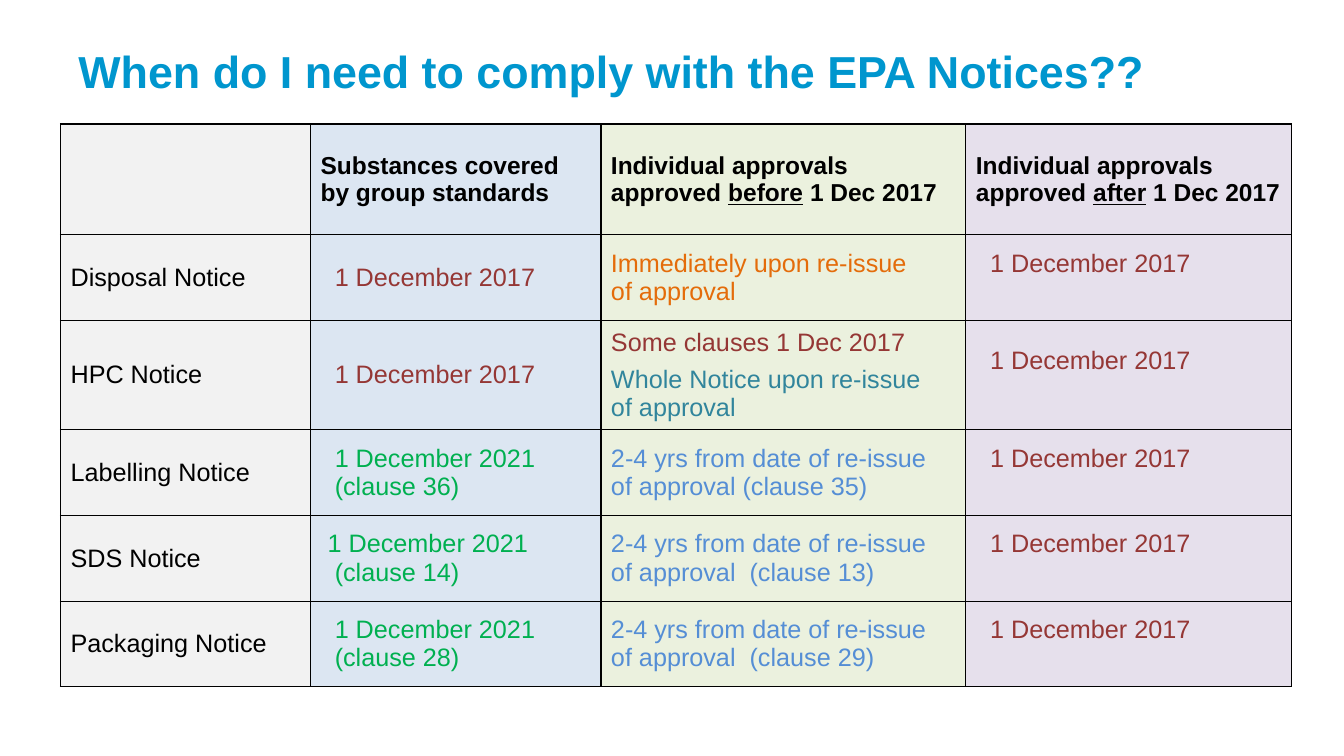
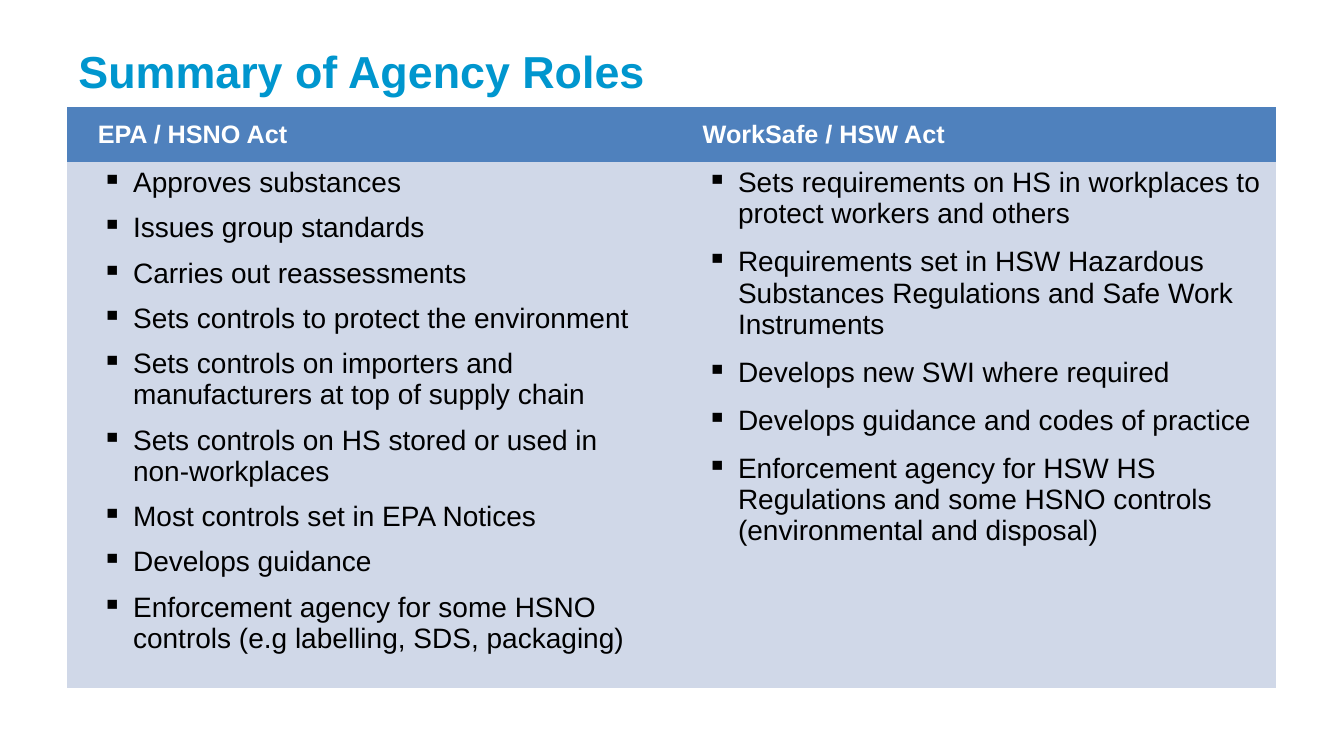
"""Build two slides on notice compliance dates and agency roles."""
from lxml import etree
from pptx import Presentation
from pptx.dml.color import RGBColor
from pptx.enum.text import MSO_ANCHOR
from pptx.oxml.ns import qn
from pptx.util import Inches, Pt

MIDDLE, TOP = MSO_ANCHOR.MIDDLE, MSO_ANCHOR.TOP
FONT = "Arial"
NO_GRID_STYLE = "{2D5ABB26-0587-4C30-8999-92F81FD0307C}"

BLACK = RGBColor(0x00, 0x00, 0x00)
WHITE = RGBColor(0xFF, 0xFF, 0xFF)
TITLE_BLUE = RGBColor(0x00, 0x96, 0xCE)
MAROON = RGBColor(0x95, 0x37, 0x35)
ORANGE = RGBColor(0xE4, 0x6C, 0x0A)
TEAL = RGBColor(0x31, 0x85, 0x9C)
GREEN = RGBColor(0x00, 0xB0, 0x50)
SKY = RGBColor(0x55, 0x8E, 0xD5)
HEADER_BLUE = RGBColor(0x4F, 0x81, 0xBD)
BODY_BLUE = RGBColor(0xD0, 0xD8, 0xE8)
COLUMN_FILLS = [
    RGBColor(0xF2, 0xF2, 0xF2),
    RGBColor(0xDC, 0xE6, 0xF2),
    RGBColor(0xEB, 0xF1, 0xDE),
    RGBColor(0xE6, 0xE0, 0xEC),
]

NOTICES_TITLE = "When do I need to comply with the EPA Notices??"
NOTICE_HEADERS = [
    "",
    "Substances covered\nby group standards",
    "Individual approvals\napproved _before_ 1 Dec 2017",
    "Individual approvals\napproved _after_ 1 Dec 2017",
]
START_DATE = "1 December 2017"
NOTICES = [
    ("Disposal Notice", (START_DATE, MAROON),
     [("Immediately upon re-issue\nof approval", ORANGE)]),
    ("HPC Notice", (START_DATE, MAROON),
     [("Some clauses 1 Dec 2017", MAROON),
      ("Whole Notice upon re-issue\nof approval", TEAL)]),
    ("Labelling Notice", ("1 December 2021\n(clause 36)", GREEN),
     [("2-4 yrs from date of re-issue\nof approval (clause 35)", SKY)]),
    ("SDS Notice", ("1 December 2021\n(clause 14)", GREEN),
     [("2-4 yrs from date of re-issue\nof approval  (clause 13)", SKY)]),
    ("Packaging Notice", ("1 December 2021\n(clause 28)", GREEN),
     [("2-4 yrs from date of re-issue\nof approval  (clause 29)", SKY)]),
]
OUTDENTED_NOTICE = "SDS Notice"
NOTICE_COLUMNS = [2.48, 2.88, 3.62, 3.23]
NOTICE_ROWS = [1.1, 0.85, 1.02, 0.85, 0.85, 0.85]
DATE_INDENT = 0.14

ROLES_TITLE = "Summary of Agency Roles"
ROLES = [
    ("EPA / HSNO Act", 10, [
        "Approves substances",
        "Issues group standards",
        "Carries out reassessments",
        "Sets controls to protect the environment",
        "Sets controls on importers and manufacturers at top of supply chain",
        "Sets controls on HS stored or used in\nnon-workplaces",
        "Most controls set in EPA Notices",
        "Develops guidance",
        "Enforcement agency for some HSNO controls (e.g labelling, SDS, packaging)",
    ]),
    ("WorkSafe / HSW Act", 12, [
        "Sets requirements on HS in workplaces to protect workers and others",
        "Requirements set in HSW Hazardous Substances Regulations and Safe Work Instruments",
        "Develops new SWI where required",
        "Develops guidance and codes of practice",
        "Enforcement agency for HSW HS Regulations and some HSNO controls\n"
        "(environmental and disposal)",
    ]),
]
ROLE_COLUMNS = [6, 6]
ROLE_ROWS = [0.55, 5.21]


def write(frame, text, size=18, color=BLACK, bold=False, first=True,
          before=0, left=0, indent=0, bullet=None):
    """Write one paragraph; underscores enclose underlined words."""
    paragraph = frame.paragraphs[0] if first else frame.add_paragraph()
    properties = paragraph._p.get_or_add_pPr()
    properties.set("marL", str(Inches(left)))
    properties.set("indent", str(Inches(indent)))
    if bullet:
        etree.SubElement(properties, qn("a:buChar")).set("char", bullet)
    if before and not first:
        paragraph.space_before = Pt(before)
    for line_index, line in enumerate(text.split("\n")):
        if line_index:
            paragraph.add_line_break()
        for part_index, part in enumerate(line.split("_")):
            run = paragraph.add_run()
            run.text = part
            font = run.font
            font.name, font.size, font.bold = FONT, Pt(size), bold
            font.color.rgb = color
            if part_index % 2:
                font.underline = True


def add_titled_slide(presentation, title):
    """Add a blank slide with the shared title style."""
    slide = presentation.slides.add_slide(presentation.slide_layouts[6])
    box = slide.shapes.add_textbox(Inches(0.68), Inches(0.36), Inches(12), Inches(0.69))
    box.text_frame.word_wrap = True
    box.text_frame.vertical_anchor = MIDDLE
    write(box.text_frame, title, size=32, color=TITLE_BLUE, bold=True)
    return slide


def add_plain_table(slide, left, top, columns, rows):
    """Add a table without a preset style."""
    frame = slide.shapes.add_table(
        len(rows), len(columns), Inches(left), Inches(top),
        Inches(sum(columns)), Inches(sum(rows)))
    table = frame.table
    table.horz_banding = False
    table._tbl.tblPr.find(qn("a:tableStyleId")).text = NO_GRID_STYLE
    for column, width in zip(table.columns, columns):
        column.width = Inches(width)
    for row, height in zip(table.rows, rows):
        row.height = Inches(height)
    return table


def fill_cell(cell, color, anchor=MIDDLE):
    """Set the fill and the anchor of a cell."""
    cell.fill.solid()
    cell.fill.fore_color.rgb = color
    cell.vertical_anchor = anchor


def add_borders(cell):
    """Draw a black line on every side of a cell."""
    properties = cell._tc.get_or_add_tcPr()
    for side in ("a:lnL", "a:lnR", "a:lnT", "a:lnB"):
        line = etree.SubElement(properties, qn(side), w=str(Pt(1)))
        solid = etree.SubElement(line, qn("a:solidFill"))
        etree.SubElement(solid, qn("a:srgbClr"), val=str(BLACK))


def build_notices(presentation):
    """Build the table of compliance dates."""
    slide = add_titled_slide(presentation, NOTICES_TITLE)
    table = add_plain_table(slide, 0.6, 1.23, NOTICE_COLUMNS, NOTICE_ROWS)
    for row in table.rows:
        for cell, color in zip(row.cells, COLUMN_FILLS):
            add_borders(cell)
            fill_cell(cell, color)
            cell.margin_right = Inches(0.05)
    for column, header in enumerate(NOTICE_HEADERS):
        if header:
            write(table.cell(0, column).text_frame, header, size=17.5, bold=True)
    for row, (name, (group_date, group_color), earlier) in enumerate(NOTICES, 1):
        notice, group, before, after = [
            table.cell(row, column) for column in range(len(NOTICE_COLUMNS))]
        write(notice.text_frame, name)
        write(group.text_frame, group_date, color=group_color, left=DATE_INDENT,
              indent=-DATE_INDENT / 2 if name == OUTDENTED_NOTICE else 0)
        for index, (text, color) in enumerate(earlier):
            write(before.text_frame, text, color=color, first=index == 0, before=6)
        write(after.text_frame, START_DATE, color=MAROON, left=DATE_INDENT)
        after.margin_bottom = Inches(0.33)


def build_roles(presentation):
    """Build the two columns of agency roles."""
    slide = add_titled_slide(presentation, ROLES_TITLE)
    table = add_plain_table(slide, 0.66, 1.06, ROLE_COLUMNS, ROLE_ROWS)
    for column, (agency, gap, duties) in enumerate(ROLES):
        header, body = table.cell(0, column), table.cell(1, column)
        fill_cell(header, HEADER_BLUE)
        fill_cell(body, BODY_BLUE, anchor=TOP)
        write(header.text_frame, agency, color=WHITE, bold=True, left=0.21)
        for index, duty in enumerate(duties):
            write(body.text_frame, duty, size=20, first=index == 0, before=gap,
                  left=0.56, indent=-0.31, bullet="▪")


def main():
    """Build and save the presentation."""
    presentation = Presentation()
    presentation.slide_width, presentation.slide_height = Inches(13.33), Inches(7.5)
    build_notices(presentation)
    build_roles(presentation)
    presentation.save("out.pptx")


if __name__ == "__main__":
    main()
